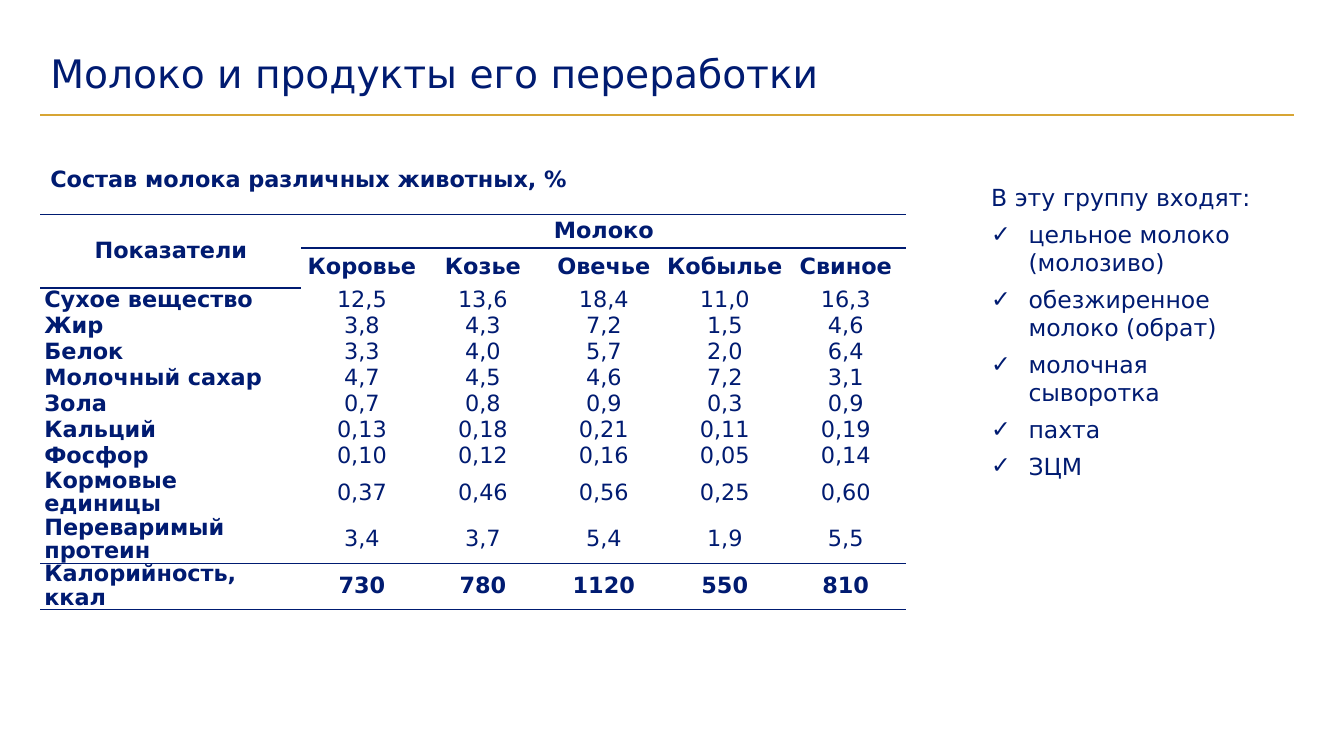
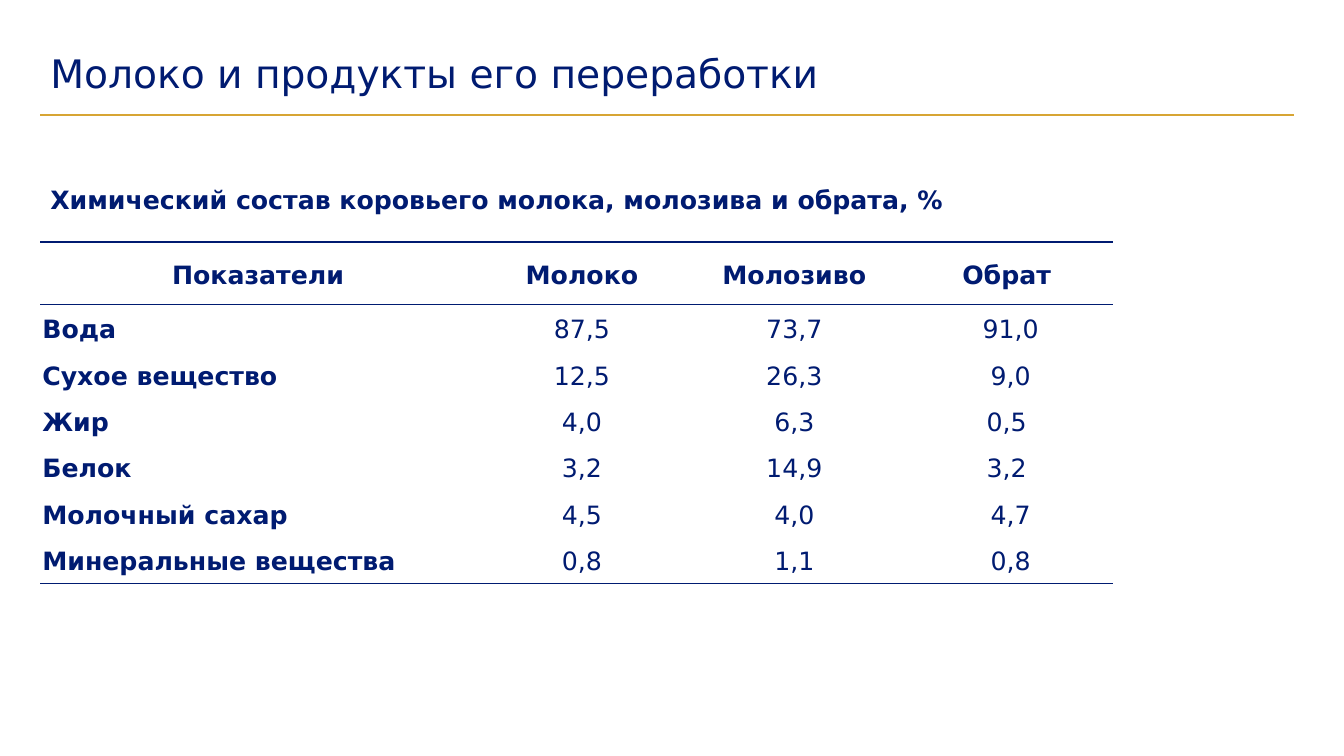
from lxml import etree
from pptx import Presentation
from pptx import util as u
from pptx.dml.color import RGBColor
from pptx.enum import shapes, text
from pptx.oxml.ns import qn

FONT, INK, GOLD, WHITE = "DejaVu Sans", "001B71", "D7A534", "FFFFFF"
NO_TABLE_STYLE = "{2D5ABB26-0587-4C30-8999-92F81FD0307C}"
LEFT, FULL_WIDTH = 3, 93.3
TITLE = "Молоко и продукты его переработки"

GROUP = [
    "цельное молоко (молозиво)",
    "обезжиренное молоко (обрат)",
    "молочная сыворотка",
    "пахта",
    "ЗЦМ",
]

ANIMALS = """Показатели|Молоко||||
|Коровье|Козье|Овечье|Кобылье|Свиное
Сухое вещество|12,5|13,6|18,4|11,0|16,3
Жир|3,8|4,3|7,2|1,5|4,6
Белок|3,3|4,0|5,7|2,0|6,4
Молочный сахар|4,7|4,5|4,6|7,2|3,1
Зола|0,7|0,8|0,9|0,3|0,9
Кальций|0,13|0,18|0,21|0,11|0,19
Фосфор|0,10|0,12|0,16|0,05|0,14
Кормовые единицы|0,37|0,46|0,56|0,25|0,60
Переваримый протеин|3,4|3,7|5,4|1,9|5,5
Калорийность, ккал|730|780|1120|550|810"""

PRODUCTS = """Показатели|Молоко|Молозиво|Обрат
Вода|87,5|73,7| 91,0
Сухое вещество|12,5|26,3| 9,0
Жир|4,0|6,3|0,5
Белок|3,2|14,9|3,2
Молочный сахар|4,5|4,0| 4,7
Минеральные вещества|0,8|1,1| 0,8"""


def color(value):
    return RGBColor.from_string(value)


def assign(target, values):
    for name, value in values.items():
        setattr(target, name, value)


def add_child(parent, tag, **attributes):
    return etree.SubElement(parent, qn(tag), attributes)


class Pages:
    """Holds the deck, its style and the current page; lengths are percent of the page."""

    def __init__(self):
        self.deck = Presentation()
        self.deck.slide_width, self.deck.slide_height = u.Inches(13.33), u.Inches(7.5)
        self.page = None

    def across(self, share):
        return u.Emu(round(self.deck.slide_width * share / 100))

    def down(self, share):
        return u.Emu(round(self.deck.slide_height * share / 100))

    def place(self, left, top, width, height):
        return self.across(left), self.down(top), self.across(width), self.down(height)

    def add_text(self, para, wording, size, bold=False, **layout):
        span = para.add_run()
        span.text = wording
        assign(span.font, {"name": FONT, "size": u.Pt(size), "bold": bold})
        span.font.color.rgb = color(INK)
        assign(para, layout)

    def fit(self, box, left, top, width, height, anchor):
        """Moves a text shape and sets up its frame."""
        sides = self.place(left, top, width, height)
        assign(box, dict(zip(("left", "top", "width", "height"), sides)))
        assign(box.text_frame, {
            "word_wrap": True, "auto_size": text.MSO_AUTO_SIZE.NONE,
            "vertical_anchor": anchor})

    def master_rule(self, top):
        """Draws a line on the current page and hands it to the master."""
        y = self.down(top)
        line = self.page.shapes.add_connector(
            shapes.MSO_CONNECTOR.STRAIGHT, self.across(LEFT), y,
            self.across(LEFT + FULL_WIDTH), y)
        line.line.color.rgb = color(GOLD)
        line.line.width = u.Pt(1)
        add_child(line.element.spPr, "a:effectLst")
        line.element.nvCxnSpPr.cNvPr.set("id", "99")
        self.page.slide_layout.slide_master.shapes.element.append(line.element)

    def new_page(self, layout, title):
        self.page = self.deck.slides.add_slide(self.deck.slide_layouts[layout])
        box = self.page.shapes.title
        self.fit(box, LEFT, 6, FULL_WIDTH, 8, text.MSO_ANCHOR.MIDDLE)
        self.add_text(box.text_frame.paragraphs[0], title, 28,
                      alignment=text.PP_ALIGN.LEFT, line_spacing=0.9)

    def caption(self, wording, size, top, width):
        box = self.page.shapes.add_textbox(*self.place(LEFT, top, width, 5))
        box.text_frame.word_wrap = True
        self.add_text(box.text_frame.paragraphs[0], wording, size, bold=True)

    def checklist(self, heading, items, *place):
        box = self.page.placeholders[1]
        self.fit(box, *place, text.MSO_ANCHOR.TOP)
        box.fill.solid()
        box.fill.fore_color.rgb = color(WHITE)
        frame = box.text_frame
        for number, wording in enumerate([heading, *items]):
            para = frame.add_paragraph() if number else frame.paragraphs[0]
            indent = u.Inches(0.37) if number else 0
            props = para._p.get_or_add_pPr()
            for name, value in {"marL": indent, "indent": -indent}.items():
                props.set(name, str(value))
            if number:
                add_child(props, "a:buFont", typeface=FONT)
                add_child(props, "a:buChar", char="✓")
            else:
                add_child(props, "a:buNone")
            self.add_text(para, wording, 16.8, space_after=u.Pt(0),
                          space_before=u.Pt(6 if number else 0))

    def table(self, data, top, columns, rows, size, spacing, margins,
              rules, bold_rows, merges=()):
        """Each rule is (side, row, first column, last column)."""
        lines = [line.split("|") for line in data.splitlines()]
        frame = self.page.shapes.add_table(
            len(rows), len(columns), *self.place(LEFT, top, sum(columns), sum(rows)))
        grid = frame.table
        for style in frame.element.iter(qn("a:tableStyleId")):
            style.text = NO_TABLE_STYLE
        assign(grid, {"first_row": False, "horz_banding": False})
        for column, width in zip(grid.columns, columns):
            column.width = self.across(width)
        for row, height in zip(grid.rows, rows):
            row.height = self.down(height)
        for r, line in enumerate(lines):
            for c, wording in enumerate(line):
                self.cell(grid.cell(r, c), wording, size, spacing, margins,
                          bold=r in bold_rows or c == 0, centred=c > 0 or r == 0)
        for first, last in merges:
            grid.cell(*first).merge(grid.cell(*last))
        for side, row, first, last in rules:
            for c in range(first, last + 1):
                self.border(grid.cell(row, c), side)

    def cell(self, cell, wording, size, spacing, margins, bold, centred):
        left, right = margins
        assign(cell, {
            "margin_left": u.Inches(right if centred else left),
            "margin_right": u.Inches(right),
            "margin_top": 0, "margin_bottom": 0,
            "vertical_anchor": text.MSO_ANCHOR.MIDDLE})
        cell.fill.background()
        align = text.PP_ALIGN.CENTER if centred else text.PP_ALIGN.LEFT
        para = cell.text_frame.paragraphs[0]
        if wording:
            self.add_text(para, wording, size, bold=bold,
                          alignment=align, line_spacing=spacing)
        else:
            para.font.size = u.Pt(size)

    def border(self, cell, side):
        props = cell._tc.get_or_add_tcPr()
        line = add_child(props, f"a:ln{side}", w=str(u.Pt(1)))
        add_child(add_child(line, "a:solidFill"), "a:srgbClr", val=INK)
        # Border lines must precede the cell fill, top before bottom.
        props.insert(len(props.findall(qn("a:lnT"))) if side == "B" else 0, line)


def main():
    pages = Pages()

    pages.new_page(1, TITLE)
    pages.master_rule(15.2)
    pages.table(
        ANIMALS, 28.4, [19.43] + [9] * 5, [4.4, 5.3] + [3.44] * 8 + [6.13] * 2,
        size=16, spacing=0.9, margins=(0.04, 0), bold_rows=(0, 1, 11),
        rules=[("T", 0, 0, 5), ("B", 0, 0, 5), ("B", 1, 0, 0),
               ("T", 11, 0, 5), ("B", 11, 0, 5)],
        merges=[((0, 0), (1, 0)), ((0, 1), (0, 5))])
    pages.checklist("В эту группу входят:", GROUP, 73, 23.6, 23.3, 44.3)
    pages.caption("Состав молока различных животных, %", 16, 21.2, 62.5)

    pages.new_page(5, TITLE)
    pages.table(
        PRODUCTS, 32, [32.4] + [15.8] * 3, [8.27] + [6.15] * 6,
        size=18, spacing=1.15, margins=(0.02, 0.02), bold_rows=(0,),
        rules=[("T", 0, 0, 3), ("B", 0, 0, 3), ("B", 6, 0, 3)])
    pages.caption("Химический состав коровьего молока, молозива и обрата, %", 18, 23.7, 70)

    pages.deck.save("out.pptx")


if __name__ == "__main__":
    main()
